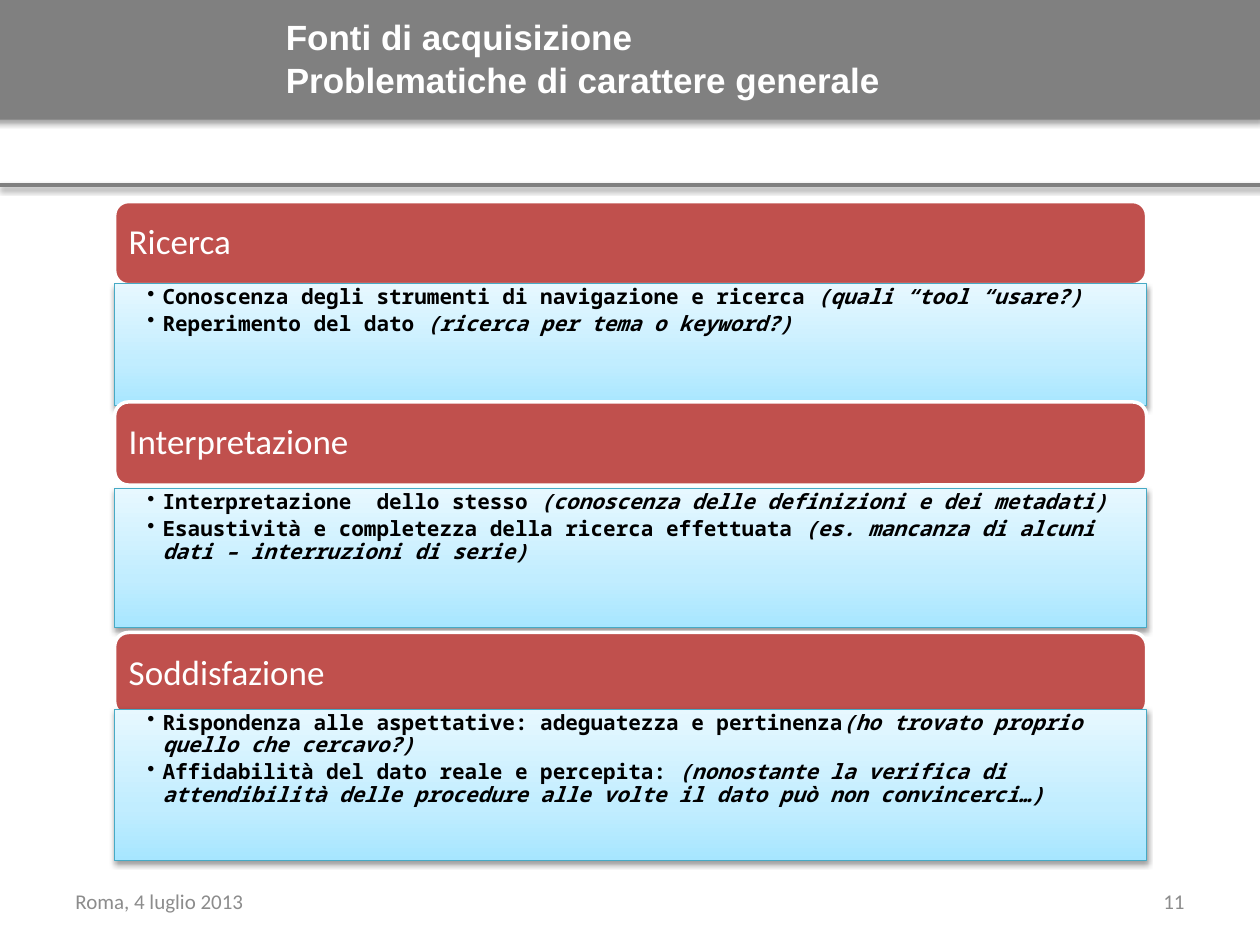
from copy import deepcopy
from dataclasses import dataclass

from lxml import etree
from pptx import Presentation
from pptx import util as u
from pptx.dml.color import RGBColor
from pptx.enum import shapes, text
from pptx.oxml.ns import qn

LEFT, WIDTH, HEADING_HEIGHT = 0.91, 8.19, 0.66
GRADIENT = [(0, "A7E6FF"), (0.35, "C1EDFF"), (1, "E7F8FF")]


@dataclass
class Section:
    heading: str
    heading_top: float
    body_top: float
    body_height: float
    points: list[tuple[str, str]]  # bold statement, italic remark


SECTIONS = [
    Section("Ricerca", 1.6, 2.25, 0.97, [
        ("Conoscenza degli strumenti di navigazione e ricerca ",
         "(quali “tool “usare?)"),
        ("Reperimento del dato ", "(ricerca per tema o keyword?)"),
    ]),
    Section("Interpretazione", 3.19, 3.88, 1.1, [
        ("Interpretazione  dello stesso ",
         "(conoscenza delle definizioni e dei metadati)"),
        ("Esaustività e completezza della ricerca effettuata ",
         "(es. mancanza di alcuni dati – interruzioni di serie)"),
    ]),
    Section("Soddisfazione", 5.02, 5.63, 1.2, [
        ("Rispondenza alle aspettative: adeguatezza e pertinenza",
         "(ho trovato proprio quello che cercavo?)"),
        ("Affidabilità del dato reale e percepita: ",
         "(nonostante la verifica di attendibilità delle procedure "
         "alle volte il dato può non convincerci…)"),
    ]),
]


def rgb(value: str) -> RGBColor:
    return RGBColor.from_string(value)


def add_shadow(s, dist: float, alpha: int) -> None:
    """Cast a soft black shadow straight down."""
    sp_pr = s._element.spPr
    effects = sp_pr.find(qn("a:effectLst"))
    if effects is None:
        effects = etree.SubElement(sp_pr, qn("a:effectLst"))
    shadow = etree.SubElement(
        effects, qn("a:outerShdw"), blurRad=str(u.Pt(3.1)),
        dist=str(u.Pt(dist)), dir="5400000", rotWithShape="0")
    color = etree.SubElement(shadow, qn("a:srgbClr"), val="000000")
    etree.SubElement(color, qn("a:alpha"), val=str(alpha * 1000))


def set_font(p, name: str, size: float, color: str, bold: bool = False) -> None:
    p.font.name, p.font.size, p.font.bold = name, u.Pt(size), bold
    p.font.color.rgb = rgb(color)


def set_frame(tf, anchor, left: float, right: float, edge: float) -> None:
    tf.word_wrap, tf.vertical_anchor = True, anchor
    tf.margin_left, tf.margin_right = u.Inches(left), u.Inches(right)
    tf.margin_top = tf.margin_bottom = u.Inches(edge)


def add_box(slide, kind, left: float, top: float, width: float, height: float):
    s = slide.shapes.add_shape(
        kind, u.Inches(left), u.Inches(top), u.Inches(width), u.Inches(height))
    s.shadow.inherit = False
    return s


def add_label(slide, left: float, top: float, width: float, height: float,
              words: str, font: tuple, align=text.PP_ALIGN.LEFT) -> None:
    tf = slide.shapes.add_textbox(
        u.Inches(left), u.Inches(top), u.Inches(width), u.Inches(height)).text_frame
    set_frame(tf, text.MSO_ANCHOR.MIDDLE, 0.1, 0.1, 0.05)
    tf.text = words
    p = tf.paragraphs[0]
    p.alignment = align
    set_font(p, *font)


def fill_gradient(s) -> None:
    """Fill from bottom to top with the three gradient stops."""
    s.fill.gradient()
    s.fill.gradient_angle = 90
    stop_list = s._element.spPr.find(qn("a:gradFill")).find(qn("a:gsLst"))
    stop_list.append(deepcopy(stop_list[0]))
    for stop, (position, color) in zip(s.fill.gradient_stops, GRADIENT):
        stop.position = position
        stop.color.rgb = rgb(color)


def add_heading(slide, section: Section) -> None:
    s = add_box(slide, shapes.MSO_SHAPE.ROUNDED_RECTANGLE,
                LEFT, section.heading_top, WIDTH, HEADING_HEIGHT)
    s.fill.solid()
    s.fill.fore_color.rgb = rgb("C0504D")
    s.line.color.rgb, s.line.width = rgb("FFFFFF"), u.Pt(2)
    set_frame(s.text_frame, text.MSO_ANCHOR.MIDDLE, 0.08, 0.08, 0.08)
    p = s.text_frame.paragraphs[0]
    p.text, p.alignment, p.line_spacing = section.heading, text.PP_ALIGN.LEFT, 0.9
    set_font(p, "Calibri", 20, "FFFFFF")


def add_body(slide, section: Section) -> None:
    s = add_box(slide, shapes.MSO_SHAPE.RECTANGLE,
                LEFT, section.body_top, WIDTH, section.body_height)
    fill_gradient(s)
    s.line.color.rgb, s.line.width = rgb("46AAC5"), u.Pt(0.75)
    add_shadow(s, 1.6, 38)
    tf = s.text_frame
    set_frame(tf, text.MSO_ANCHOR.TOP, 0.26, 0.12, 0.02)
    for i, (statement, remark) in enumerate(section.points):
        p = tf.add_paragraph() if i else tf.paragraphs[0]
        p.alignment, p.line_spacing, p.space_after = text.PP_ALIGN.LEFT, 0.9, u.Pt(2.4)
        p_pr = p._p.get_or_add_pPr()
        p_pr.set("marL", str(u.Inches(0.12)))
        p_pr.set("indent", str(u.Inches(-0.12)))
        etree.SubElement(p_pr, qn("a:buChar"), char="•")
        set_font(p, "Noto Sans Mono", 12, "000000", bold=True)
        p.add_run().text = statement
        r = p.add_run()
        r.text, r.font.italic = remark, True


def main() -> None:
    prs = Presentation()
    prs.slide_width, prs.slide_height = u.Inches(10), u.Inches(7.5)
    slide = prs.slides.add_slide(prs.slide_layouts[6])

    band = add_box(slide, shapes.MSO_SHAPE.RECTANGLE, -0.12, -0.03, 10.14, 0.98)
    band.fill.solid()
    band.fill.fore_color.rgb = rgb("808080")
    band.line.fill.background()
    add_shadow(band, 1.8, 35)
    add_label(slide, 2.17, 0, 8.39, 0.92,
              "Fonti di acquisizione\vProblematiche di carattere generale",
              ("Arial", 20, "FFFFFF", True))

    rule = slide.shapes.add_connector(
        shapes.MSO_CONNECTOR.STRAIGHT,
        u.Inches(0), u.Inches(1.47), u.Inches(10.12), u.Inches(1.47))
    rule.line.color.rgb, rule.line.width = rgb("808080"), u.Pt(2)
    add_shadow(rule, 1.6, 38)

    for section in SECTIONS:
        add_heading(slide, section)
        add_body(slide, section)

    footer_font = ("Calibri", 12, "8C8C8C")
    add_label(slide, 7.17, 6.95, 2.33, 0.4, "11", footer_font, text.PP_ALIGN.RIGHT)
    add_label(slide, 0.5, 6.95, 2.33, 0.4, "Roma, 4 luglio 2013", footer_font)
    prs.save("out.pptx")


if __name__ == "__main__":
    main()
